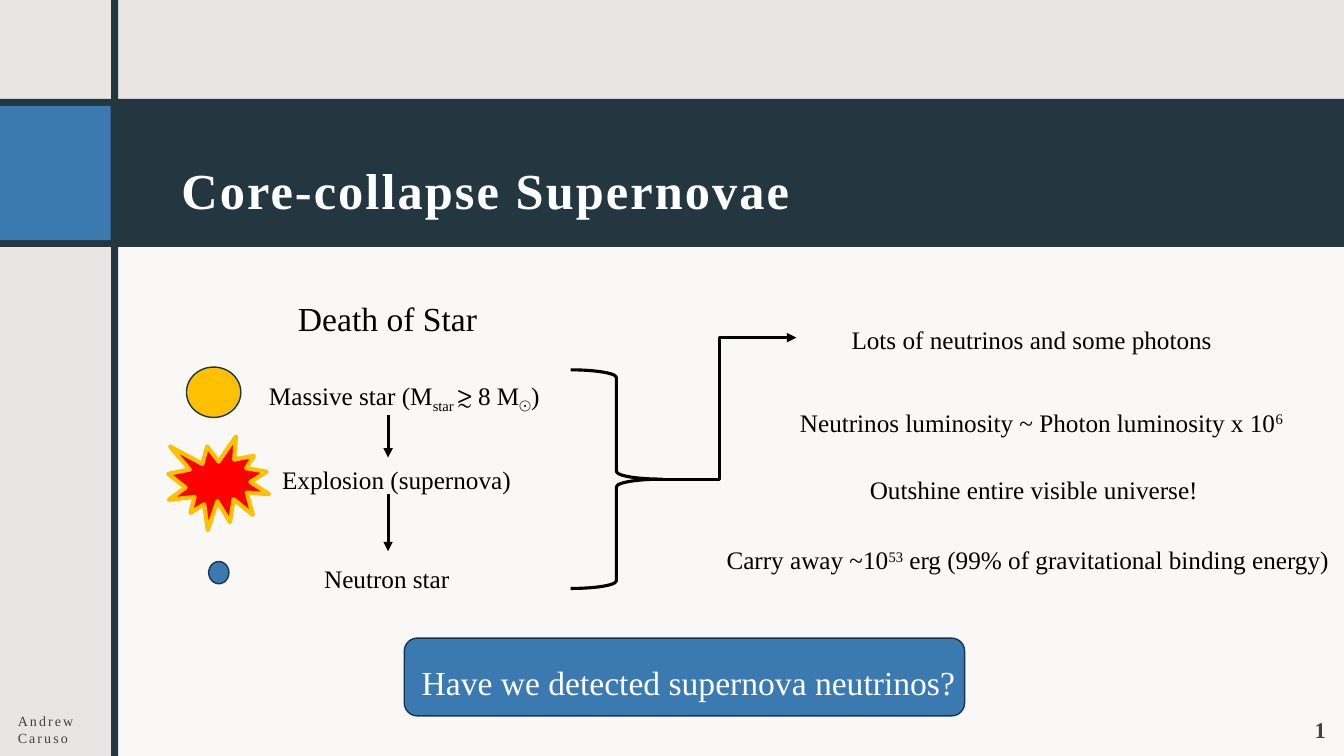
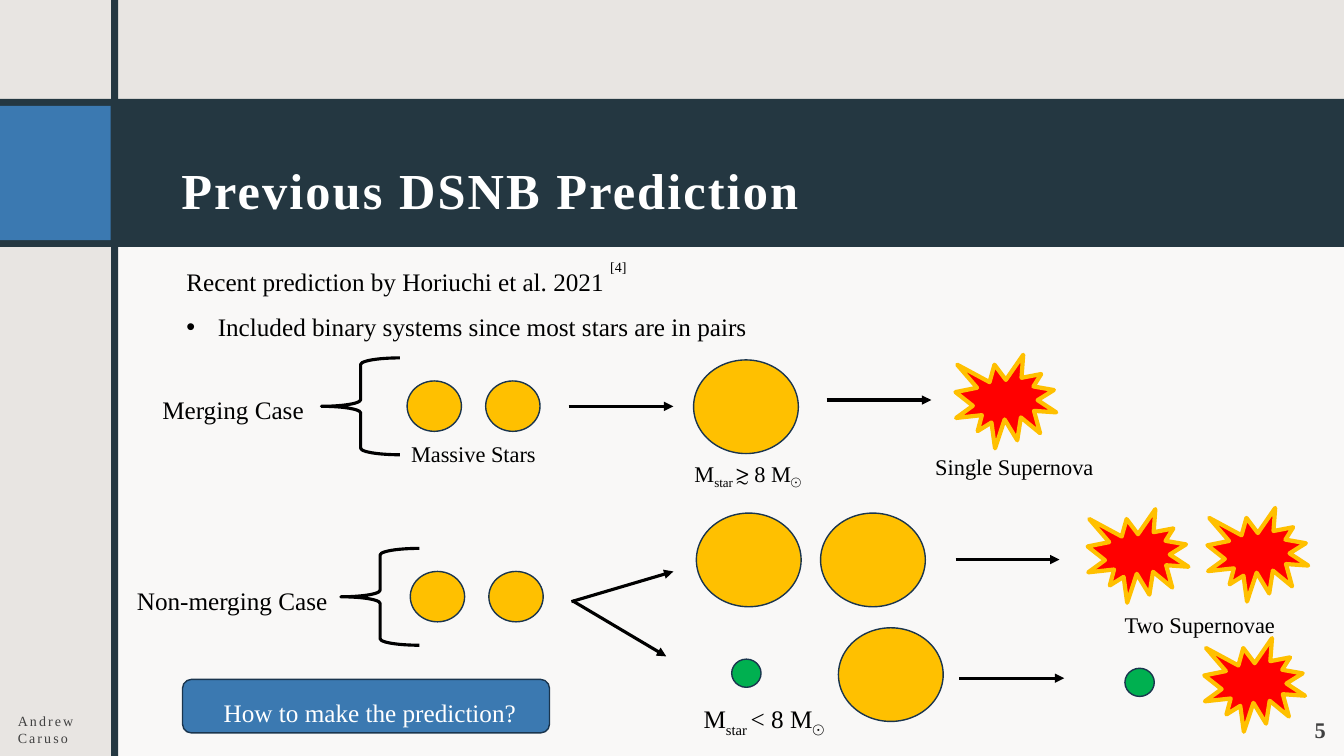
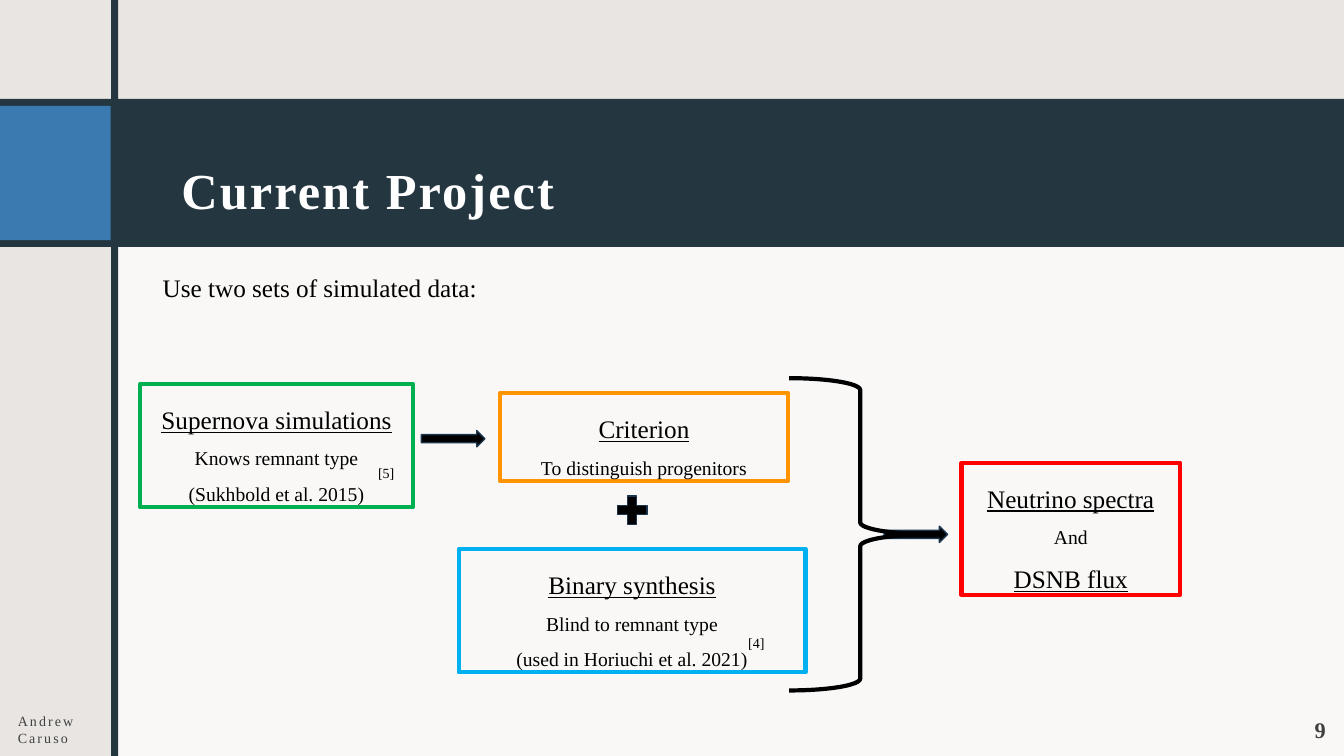
from lxml import etree
from pptx import Presentation
from pptx.dml.color import RGBColor
from pptx.enum.shapes import MSO_CONNECTOR as CONNECTOR, MSO_SHAPE as SHAPE
from pptx.enum.text import MSO_ANCHOR as ANCHOR, PP_ALIGN as ALIGN
from pptx.oxml.ns import qn
from pptx.util import Cm, Pt

FONT = "Times New Roman"
BLACK, WHITE, GREY = "000000", "FFFFFF", "404040"
SAND, PANEL, NAVY, BLUE = "E8E5E2", "F9F8F7", "243741", "3B79B1"
OUTLINE, GOLD, RED, GREEN = "1A354E", "FFC000", "FF0000", "00B050"
SKY, ORANGE = "00B0F0", "FF9300"
FOOTER_INSETS = (0.3, 0.3, 0.3, 0.25)


def draw(slide, preset, box, fill=None, line=None, width=1):
    shape = slide.shapes.add_shape(preset, *map(Cm, box))
    shape.shadow.inherit = False
    if fill:
        shape.fill.solid()
        shape.fill.fore_color.rgb = RGBColor.from_string(fill)
    else:
        shape.fill.background()
    if line:
        shape.line.color.rgb = RGBColor.from_string(line)
        shape.line.width = Pt(width)
    else:
        shape.line.fill.background()
    return shape


def write(shape, paragraphs, size=18, color=BLACK, align=ALIGN.LEFT, spacing=1.5,
          insets=(0.25, 0.13, 0.25, 0.13), anchor=ANCHOR.TOP, bold=False, tracking=0):
    """Fill a shape; a paragraph is a string or a list of (text, baseline percent)."""
    frame = shape.text_frame
    frame.word_wrap = True
    frame.vertical_anchor = anchor
    (frame.margin_left, frame.margin_top,
     frame.margin_right, frame.margin_bottom) = map(Cm, insets)
    for index, runs in enumerate(paragraphs):
        paragraph = frame.add_paragraph() if index else frame.paragraphs[0]
        paragraph.alignment = align
        paragraph.line_spacing = spacing
        for text, baseline in [(runs, 0)] if isinstance(runs, str) else runs:
            run = paragraph.add_run()
            run.text = text
            run.font.name, run.font.size, run.font.bold = FONT, Pt(size), bold
            run.font.color.rgb = RGBColor.from_string(color)
            properties = run.font._element
            if baseline:
                properties.set("baseline", str(baseline * 1000))
            if tracking:
                properties.set("spc", str(int(tracking * 100)))
    return frame


deck = Presentation()
deck.slide_width, deck.slide_height = Cm(33.87), Cm(19.05)

# Shared frame: panel, title band, accent block, footer
slides = []
for title, number in [("Core-collapse Supernovae", "1"),
                      ("Previous DSNB Prediction", "5"),
                      ("Current Project", "9")]:
    slide = deck.slides.add_slide(deck.slide_layouts[6])
    slide.background.fill.solid()
    slide.background.fill.fore_color.rgb = RGBColor.from_string(SAND)
    for box, fill in [((2.9, 5.92, 30.97, 13.13), PANEL),
                      ((0, 2.49, 33.87, 3.73), NAVY),
                      ((0, 2.67, 2.79, 3.38), BLUE),
                      ((2.8, 0, 0.18, 19.05), NAVY)]:
        draw(slide, SHAPE.RECTANGLE, box, fill)
    for text, box, style in [
        (title, (4.27, 2.92, 27.81, 2.87),
         dict(size=36, color=WHITE, bold=True, anchor=ANCHOR.MIDDLE)),
        (number, (30.99, 17.7, 2.72, 1.27),
         dict(size=16, color=GREY, bold=True, spacing=1, align=ALIGN.RIGHT,
              anchor=ANCHOR.BOTTOM)),
        ("Andrew Caruso", (0.15, 17.73, 2.13, 1.27),
         dict(size=10, color=GREY, spacing=1, anchor=ANCHOR.MIDDLE)),
    ]:
        write(slide.shapes.add_textbox(*map(Cm, box)), [text],
              insets=FOOTER_INSETS, tracking=1.5, **style)
    slides.append(slide)
collapse, prediction, project = slides

# Stars, remnants and explosions
for slide, size, fill, corners in [
    (collapse, (1.37, 1.27), GOLD, [(4.7, 9.25)]),
    (collapse, (0.51, 0.56), BLUE, [(5.26, 14.15)]),
    (prediction, (1.37, 1.27), GOLD,
     [(10.26, 9.6), (12.24, 9.6), (10.34, 14.4), (12.32, 14.4)]),
    (prediction, (2.64, 2.36), GOLD,
     [(17.48, 9.07), (17.55, 12.93), (20.68, 12.93), (21.13, 15.82)]),
    (prediction, (0.74, 0.71), GREEN, [(18.44, 16.61), (28.35, 16.84)]),
]:
    for corner in corners:
        draw(slide, SHAPE.OVAL, corner + size, fill, OUTLINE)

for slide, left, top in [(collapse, 4.24, 11), (prediction, 24.08, 8.94),
                         (prediction, 30.43, 12.8), (prediction, 27.41, 12.83),
                         (prediction, 30.35, 16.08)]:
    draw(slide, SHAPE.EXPLOSION1, (left, top, 2.54, 2.36), RED, GOLD, 3)

# Cards of the current project
for box, line, rows in [
    ((3.53, 9.68, 6.88, 3.1), GREEN,
     [("Supernova simulations", True), ("Knows remnant type", False),
      ("(Sukhbold et al. 2015)", False)]),
    ((11.56, 13.84, 8.74, 3.1), SKY,
     [("Binary synthesis", True), ("Blind to remnant type", False),
      ("(used in Horiuchi et al. 2021)", False)]),
    ((12.6, 9.91, 7.26, 2.21), ORANGE,
     [("Criterion", True), ("To distinguish progenitors", False)]),
    ((24.23, 11.66, 5.51, 3.33), RED,
     [("Neutrino spectra", True), ("And", False), ("DSNB flux", True)]),
]:
    card = draw(project, SHAPE.RECTANGLE, box, line=line, width=3)
    frame = write(card, [text for text, _ in rows], align=ALIGN.CENTER)
    for paragraph, (_, is_heading) in zip(frame.paragraphs, rows):
        font = paragraph.runs[0].font
        font.underline = is_heading
        font.size = Pt(18 if is_heading else 14)

for preset, box in [(SHAPE.RIGHT_ARROW, (10.62, 10.85, 1.6, 0.41)),
                    (SHAPE.RIGHT_ARROW, (22.28, 13.26, 1.6, 0.41)),
                    (SHAPE.MATH_PLUS, (15.42, 12.37, 1.02, 0.97))]:
    draw(project, preset, box, BLACK, OUTLINE)

for slide, preset, box, width in [
    (collapse, SHAPE.RIGHT_BRACE, (14.38, 9.32, 2.31, 5.51), 2.25),
    (prediction, SHAPE.LEFT_BRACE, (8.1, 9.02, 1.98, 2.44), 2.25),
    (prediction, SHAPE.LEFT_BRACE, (8.59, 13.82, 1.98, 2.44), 2.25),
    (project, SHAPE.RIGHT_BRACE, (19.89, 9.53, 3.58, 7.87), 3),
]:
    draw(slide, preset, box, line=BLACK, width=width)

# Closing questions
for slide, question, box, size in [
    (collapse, "Have we detected supernova neutrinos?", (10.19, 16.08, 14.12, 1.96), 24),
    (prediction, "How to make the prediction?", (4.6, 17.12, 9.25, 1.35), 18),
]:
    write(draw(slide, SHAPE.ROUNDED_RECTANGLE, box, BLUE, OUTLINE), [question],
          size, WHITE, ALIGN.CENTER, insets=(0.2, 0, 0, 0))

# Labels: left, top, width, text size, line spacing, runs
labels = [
    (collapse, [
        (7.26, 6.88, 5.3, 24, 1.5, "Death of Star"),
        (6.53, 9.02, 10.06, 18, 1.5, [("Massive star (M", 0), ("star ", -25),
                                      ("≳ 8 M", 0), ("☉", -25), (")", 0)]),
        (6.86, 11.18, 6.38, 18, 1.5, "Explosion (supernova)"),
        (7.92, 13.69, 4, 18, 1.5, "Neutron star"),
        (21.21, 7.67, 10.77, 18, 1.5, "Lots of neutrinos and some photons"),
        (19.91, 9.75, 13.9, 18, 1.5,
         [("Neutrinos luminosity ~ Photon luminosity x 10", 0), ("6", 30)]),
        (21.67, 11.43, 9.86, 18, 1.5, "Outshine entire visible universe!"),
        (18.06, 13.21, 16.81, 18, 1.5,
         [("Carry away ~10", 0), ("53", 30),
          (" erg (99% of gravitational binding energy)", 0)]),
    ]),
    (prediction, [
        (3.84, 9.42, 6.38, 18, 1.5, "Merging Case"),
        (3.2, 14.25, 6.38, 18, 1.5, "Non-merging Case"),
        (10.11, 10.97, 3.89, 16, 1, "Massive Stars"),
        (17.25, 11.46, 3.89, 16, 1,
         [("M", 0), ("star ", -25), ("≳ 8 M", 0), ("☉", -25)]),
        (17.48, 17.6, 7.11, 18, 1,
         [("M", 0), ("star ", -25), ("< 8 M", 0), ("☉", -25)]),
        (23.32, 10.95, 6.38, 16, 1.5, "Single Supernova"),
        (28.09, 14.94, 5.7, 16, 1.5, "Two Supernovae"),
        (15.04, 6.38, 1.35, 10, 1, " [4]"),
    ]),
    (project, [
        (3.85, 6.35, 9, 18, 1.5, "Use two sets of simulated data:"),
        (9.19, 11.58, 1.35, 10, 1, " [5]"),
        (18.52, 15.85, 1.35, 10, 1, " [4]"),
    ]),
]
for slide, entries in labels:
    for left, top, width, size, spacing, runs in entries:
        height = size * spacing * 0.04 + 0.26
        label = slide.shapes.add_textbox(Cm(left), Cm(top), Cm(width), Cm(height))
        write(label, [runs], size, spacing=spacing)

intro = write(prediction.shapes.add_textbox(Cm(4.45), Cm(6.2), Cm(15), Cm(2.44)),
              ["Recent prediction by Horiuchi et al. 2021",
               "Included binary systems since most stars are in pairs"])
bullet = intro.paragraphs[1]._p.get_or_add_pPr()
bullet.set("marL", str(int(Cm(0.79))))
bullet.set("indent", str(-int(Cm(0.79))))
etree.SubElement(bullet, qn("a:buFont")).set("typeface", "Arial")
etree.SubElement(bullet, qn("a:buChar")).set("char", "•")

# Arrows
for slide, route, ends in [
    (collapse, CONNECTOR.STRAIGHT, (9.78, 10.46, 9.78, 11.53)),
    (collapse, CONNECTOR.STRAIGHT, (9.78, 12.45, 9.78, 13.89)),
    (collapse, CONNECTOR.ELBOW, (16.21, 12.09, 20.07, 8.51)),
    (prediction, CONNECTOR.STRAIGHT, (14.33, 10.24, 16.97, 10.24)),
    (prediction, CONNECTOR.STRAIGHT, (20.83, 10.08, 23.47, 10.08)),
    (prediction, CONNECTOR.STRAIGHT, (14.4, 15.16, 16.97, 14.4)),
    (prediction, CONNECTOR.STRAIGHT, (14.43, 15.14, 16.79, 16.54)),
    (prediction, CONNECTOR.STRAIGHT, (24.08, 14.1, 26.7, 14.1)),
    (prediction, CONNECTOR.STRAIGHT, (24.18, 17.09, 26.82, 17.09)),
]:
    arrow = slide.shapes.add_connector(route, *map(Cm, ends))
    arrow.line.color.rgb = RGBColor.from_string(BLACK)
    arrow.line.width = Pt(2.25)
    properties = arrow._element.spPr
    etree.SubElement(properties.find(qn("a:ln")), qn("a:tailEnd")).set("type", "triangle")
    etree.SubElement(properties, qn("a:effectLst"))

deck.save("out.pptx")
